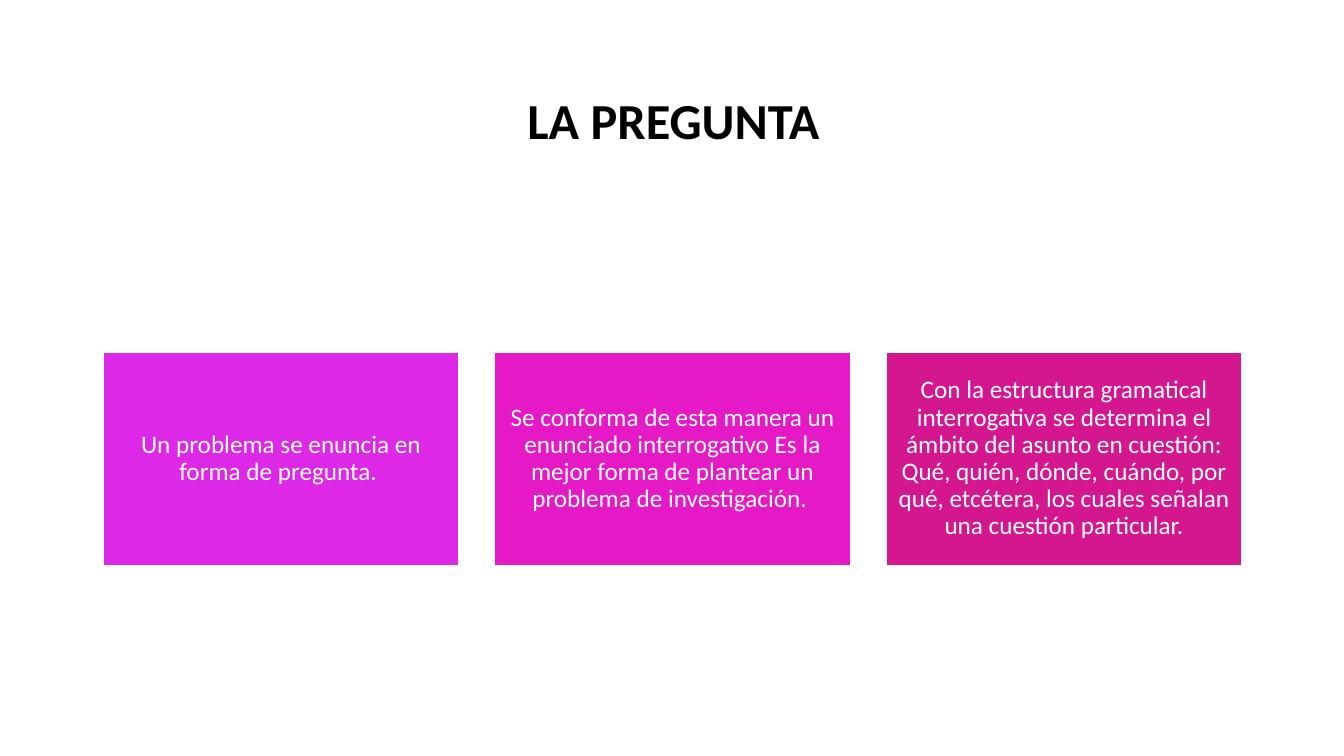
from pptx import Presentation
from pptx.dml.color import RGBColor
from pptx.enum.shapes import MSO_SHAPE
from pptx.enum.text import MSO_ANCHOR, PP_ALIGN
from pptx.util import Inches, Pt

RECT = MSO_SHAPE.RECTANGLE
MIDDLE = MSO_ANCHOR.MIDDLE
CENTER = PP_ALIGN.CENTER

FONT = "Calibri"
COLORS = {
    "title": "000000",
    "white": "FFFFFF",
    "violet": "DD29E7",
    "magenta": "E519C5",
    "raspberry": "D5178F",
}
CARDS = [
    ("violet", "Un problema se enuncia en forma de pregunta. "),
    ("magenta", "Se conforma de esta manera un enunciado interrogativo Es la mejor "
                "forma de plantear un problema de investigación. "),
    ("raspberry", "Con la estructura gramatical interrogativa se determina el ámbito "
                  "del asunto en cuestión: Qué, quién, dónde, cuándo, por qué, "
                  "etcétera, los cuales señalan una cuestión particular."),
]


def rgb(name):
    return RGBColor.from_string(COLORS[name])


def write_centered(sp, text, size, color, bold=False):
    tf = sp.text_frame
    tf.word_wrap = True
    tf.vertical_anchor = MIDDLE
    p = tf.paragraphs[0]
    p.text = text
    p.alignment = CENTER
    p.line_spacing = 0.9
    font = p.runs[0].font
    font.name = FONT
    font.size = Pt(size)
    font.bold = bold
    font.color.rgb = rgb(color)


def add_title(slide, left, top, width, height):
    sp = slide.shapes.add_textbox(Inches(left), Inches(top), Inches(width), Inches(height))
    write_centered(sp, "LA PREGUNTA", 36, "title", bold=True)


def add_cards(slide, left, top, width, height, gap=0.35):
    card_width = (width - gap * (len(CARDS) - 1)) / len(CARDS)
    for i, (color, text) in enumerate(CARDS):
        x = left + i * (card_width + gap)
        sp = slide.shapes.add_shape(RECT, Inches(x), Inches(top),
                                    Inches(card_width), Inches(height))
        sp.shadow.inherit = False
        sp.fill.solid()
        sp.fill.fore_color.rgb = rgb(color)
        sp.line.color.rgb = rgb("white")
        sp.line.width = Pt(1)
        tf = sp.text_frame
        tf.margin_left = tf.margin_right = Inches(0.07)
        tf.margin_top = tf.margin_bottom = Inches(0.07)
        write_centered(sp, text, 18, "white")


def main():
    prs = Presentation()
    prs.slide_width = Inches(13.33)
    prs.slide_height = Inches(7.5)
    slide = prs.slides.add_slide(prs.slide_layouts[6])

    # Heading
    add_title(slide, 1.67, 0.6, 10.02, 1.24)
    # Row of three statements
    add_cards(slide, 1.02, 3.49, 11.3, 2.12)

    prs.save("out.pptx")


if __name__ == "__main__":
    main()
